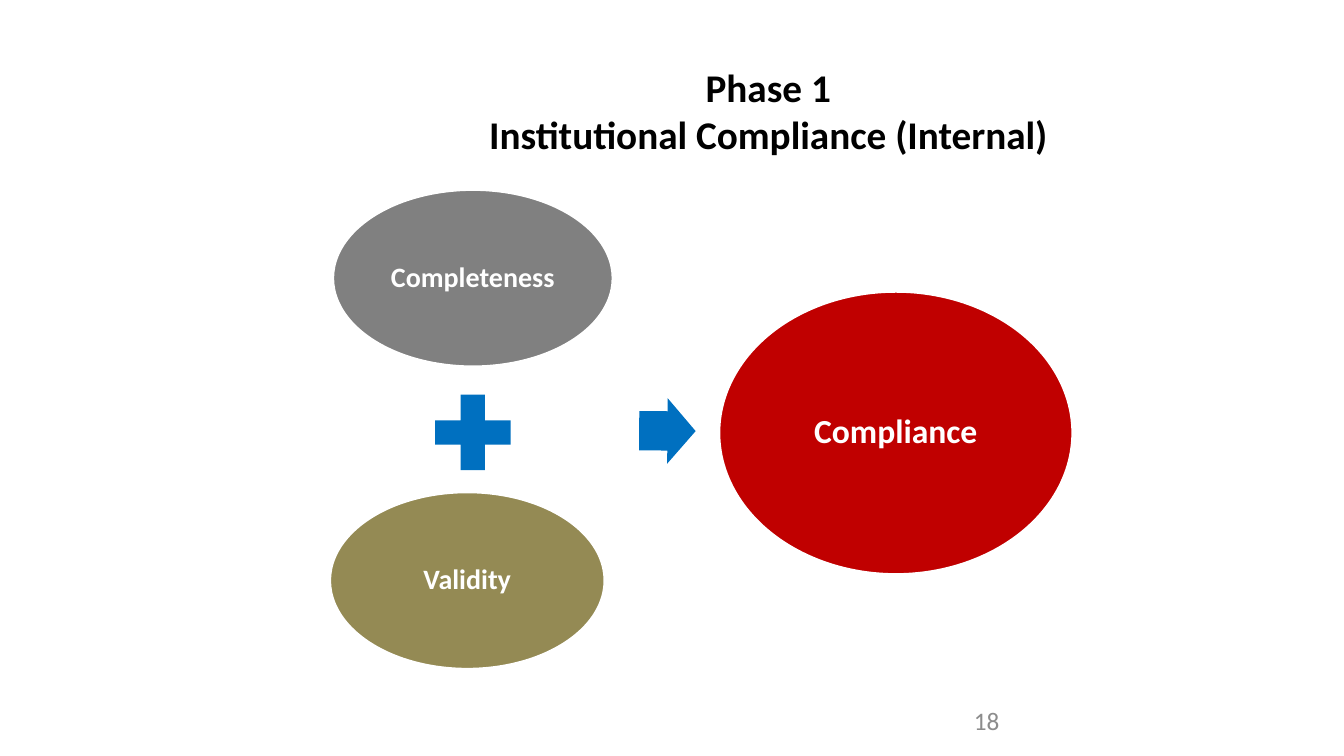
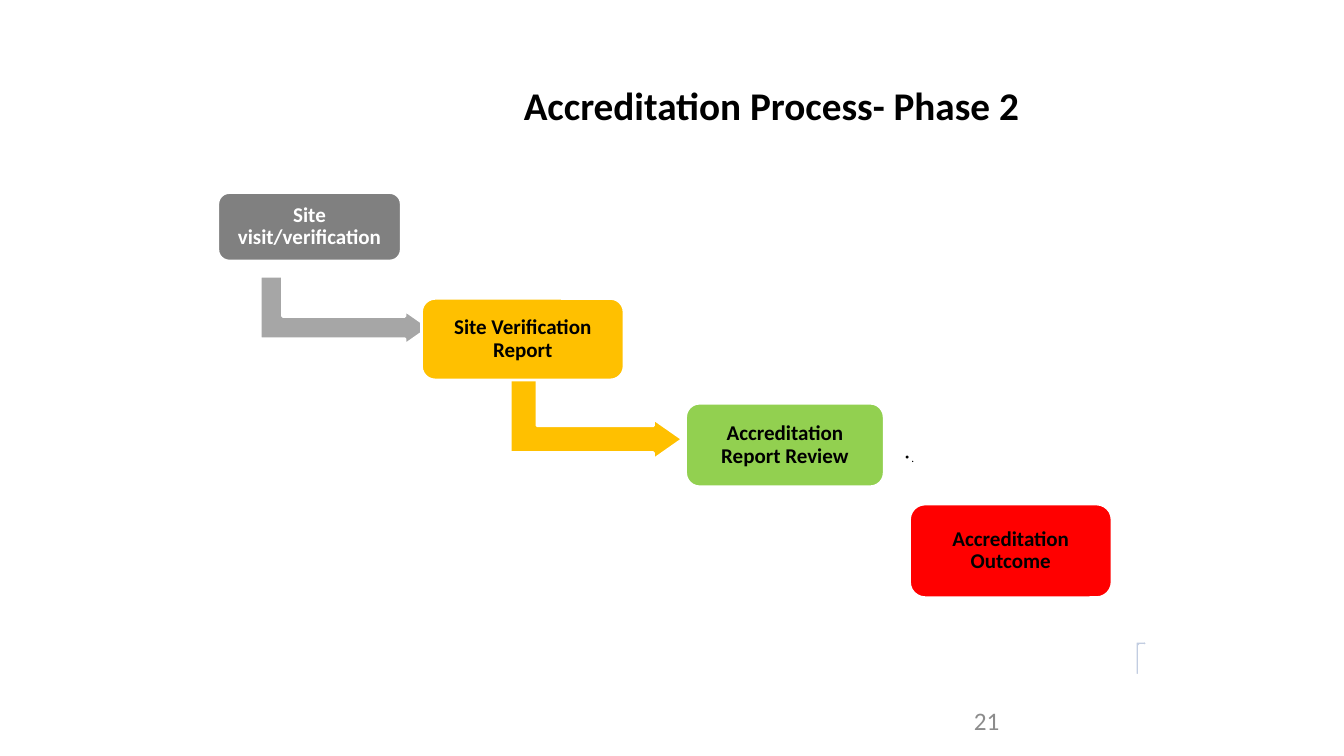
from dataclasses import dataclass

from pptx import Presentation
from pptx.dml.color import RGBColor
from pptx.enum.shapes import MSO_SHAPE
from pptx.enum.text import MSO_ANCHOR, MSO_AUTO_SIZE, PP_ALIGN
from pptx.oxml.ns import qn
from pptx.slide import Slide
from pptx.text.text import TextFrame
from pptx.util import Inches, Pt

OVAL = MSO_SHAPE.OVAL
PLUS = MSO_SHAPE.MATH_PLUS
ARROW = MSO_SHAPE.RIGHT_ARROW
BENT = MSO_SHAPE.BENT_UP_ARROW
ROUND = MSO_SHAPE.ROUNDED_RECTANGLE
TOP, MIDDLE, BOTTOM = MSO_ANCHOR.TOP, MSO_ANCHOR.MIDDLE, MSO_ANCHOR.BOTTOM
LEFT, CENTER = PP_ALIGN.LEFT, PP_ALIGN.CENTER
NO_FIT = MSO_AUTO_SIZE.NONE
TITLE_ONLY = 5

Box = tuple[float, float, float, float]


@dataclass(frozen=True)
class Theme:
    """Colours, font and type sizes of the deck."""
    font: str = "Calibri"
    black: str = "000000"
    white: str = "FFFFFF"
    number: str = "8C8C8C"
    gray: str = "808080"
    silver: str = "A6A6A6"
    blue: str = "0070C0"
    pale: str = "C2CDE1"
    olive: str = "948A54"
    crimson: str = "C00000"
    amber: str = "FFC000"
    green: str = "92D050"
    red: str = "FF0000"
    title_size: int = 28
    result_size: int = 24
    oval_size: int = 20
    number_size: int = 18
    step_size: int = 15
    bullet_size: int = 8
    outline: int = 2


T = Theme()


@dataclass(frozen=True)
class Item:
    """A filled shape with an optional label."""
    kind: MSO_SHAPE
    box: Box
    fill: str
    text: str = ""
    size: int = T.step_size
    color: str = T.black
    outlined: bool = True
    inset: float = 0.06
    rotation: float = 0
    flip: bool = False
    adjust: tuple[float, ...] = ()


BENT_ADJUST = (0.328, 0.25, 0.358)
STEP_ADJUST = (0.167,)

COMPLIANCE = (
    Item(OVAL, (3.3, 1.88, 2.78, 1.76), T.gray, "Completeness", T.oval_size, T.white, inset=0.03),
    Item(PLUS, (4.18, 3.78, 1.02, 1.02), T.blue, outlined=False),
    Item(OVAL, (3.27, 4.88, 2.73, 1.76), T.olive, "Validity", T.oval_size, T.white, inset=0.03),
    Item(ARROW, (6.34, 3.95, 0.56, 0.65), T.blue, outlined=False, rotation=0.4, adjust=(0.6, 0.5)),
    Item(OVAL, (7.13, 2.89, 3.51, 2.81), T.crimson, "Compliance", T.result_size, T.white, inset=0.03),
)

PROCESS = (
    Item(BENT, (3.08, 2.24, 0.68, 1.68), T.silver, rotation=90, adjust=BENT_ADJUST),
    Item(ROUND, (2.16, 1.91, 1.82, 0.68), T.gray, "Site visit/verification", color=T.white, adjust=STEP_ADJUST),
    Item(BENT, (5.51, 3.3, 0.81, 1.71), T.amber, rotation=90, adjust=BENT_ADJUST),
    Item(ROUND, (4.18, 2.96, 2.01, 0.81), T.amber, "Site Verification Report", adjust=STEP_ADJUST),
    Item(BENT, (11.15, 6.46, 0.35, 0.13), T.pale, rotation=270, flip=True, adjust=BENT_ADJUST),
    Item(ROUND, (6.8, 4, 1.97, 0.83), T.green, "Accreditation Report Review", adjust=STEP_ADJUST),
    Item(ROUND, (9.02, 5, 2.01, 0.93), T.red, "Accreditation Outcome", adjust=STEP_ADJUST),
)


def rgb(color: str) -> RGBColor:
    """Turn a hex string into a colour."""
    return RGBColor.from_string(color)


def write(tf: TextFrame, text: str, *, size: int, color: str = T.black, bold: bool = False,
          align: PP_ALIGN = CENTER, anchor: MSO_ANCHOR = MIDDLE, spacing: float = 1,
          inset: float | None = None, bullet: str = "") -> None:
    """Write one formatted paragraph into a text frame."""
    tf.word_wrap = True
    tf.auto_size = NO_FIT
    tf.vertical_anchor = anchor
    if inset is not None:
        tf.margin_left = tf.margin_top = tf.margin_right = tf.margin_bottom = Inches(inset)
    p = tf.paragraphs[0]
    p.text = text
    p.alignment = align
    p.line_spacing = spacing
    if bullet:
        pPr = p._p.get_or_add_pPr()
        pPr.set("marL", str(Inches(0.06)))
        pPr.set("indent", str(Inches(-0.06)))
        pPr.append(pPr.makeelement(qn("a:buChar"), {"char": bullet}))
    for r in p.runs:
        r.font.name = T.font
        r.font.size = Pt(size)
        r.font.bold = bold
        r.font.color.rgb = rgb(color)


def add_text(s: Slide, box: Box, text: str, **style) -> None:
    """Add a text box."""
    sp = s.shapes.add_textbox(*map(Inches, box))
    write(sp.text_frame, text, **style)


def add_item(s: Slide, item: Item) -> None:
    """Draw a filled shape and its label."""
    sp = s.shapes.add_shape(item.kind, *map(Inches, item.box))
    sp.shadow.inherit = False
    sp.rotation = item.rotation
    if item.flip:
        sp._element.spPr.find(qn("a:xfrm")).set("flipV", "1")
    for i, value in enumerate(item.adjust):
        sp.adjustments[i] = value
    sp.fill.solid()
    sp.fill.fore_color.rgb = rgb(item.fill)
    if item.outlined:
        sp.line.color.rgb = rgb(T.white)
        sp.line.width = Pt(T.outline)
    else:
        sp.line.fill.background()
    if item.text:
        write(sp.text_frame, item.text, size=item.size, color=item.color, bold=True,
              spacing=0.9, inset=item.inset)


def add_slide(prs: Presentation, title: str, box: Box, number: int, items: tuple[Item, ...]) -> Slide:
    """Add a slide with its title, page number and shapes."""
    s = prs.slides.add_slide(prs.slide_layouts[TITLE_ONLY])
    sp = s.shapes.title
    sp.left, sp.top, sp.width, sp.height = map(Inches, box)
    write(sp.text_frame, title, size=T.title_size, bold=True, anchor=BOTTOM)
    add_text(s, (9.56, 6.95, 3.11, 0.4), str(number), size=T.number_size, color=T.number,
             align=LEFT, anchor=TOP)
    for item in items:
        add_item(s, item)
    return s


def main() -> None:
    """Build and save the deck."""
    prs = Presentation()
    prs.slide_width, prs.slide_height = Inches(13.33), Inches(7.5)
    add_slide(prs, "Phase 1\vInstitutional Compliance (Internal)", (2.86, 0.73, 9.52, 0.88), 18, COMPLIANCE)
    s = add_slide(prs, "Accreditation Process- Phase 2", (2.91, 0.64, 9.48, 0.68), 21, PROCESS)
    add_text(s, (8.94, 4.45, 2.11, 0.21), ".", size=T.bullet_size, align=LEFT, spacing=0.9,
             inset=0.04, bullet="•")
    prs.save("out.pptx")


if __name__ == "__main__":
    main()
